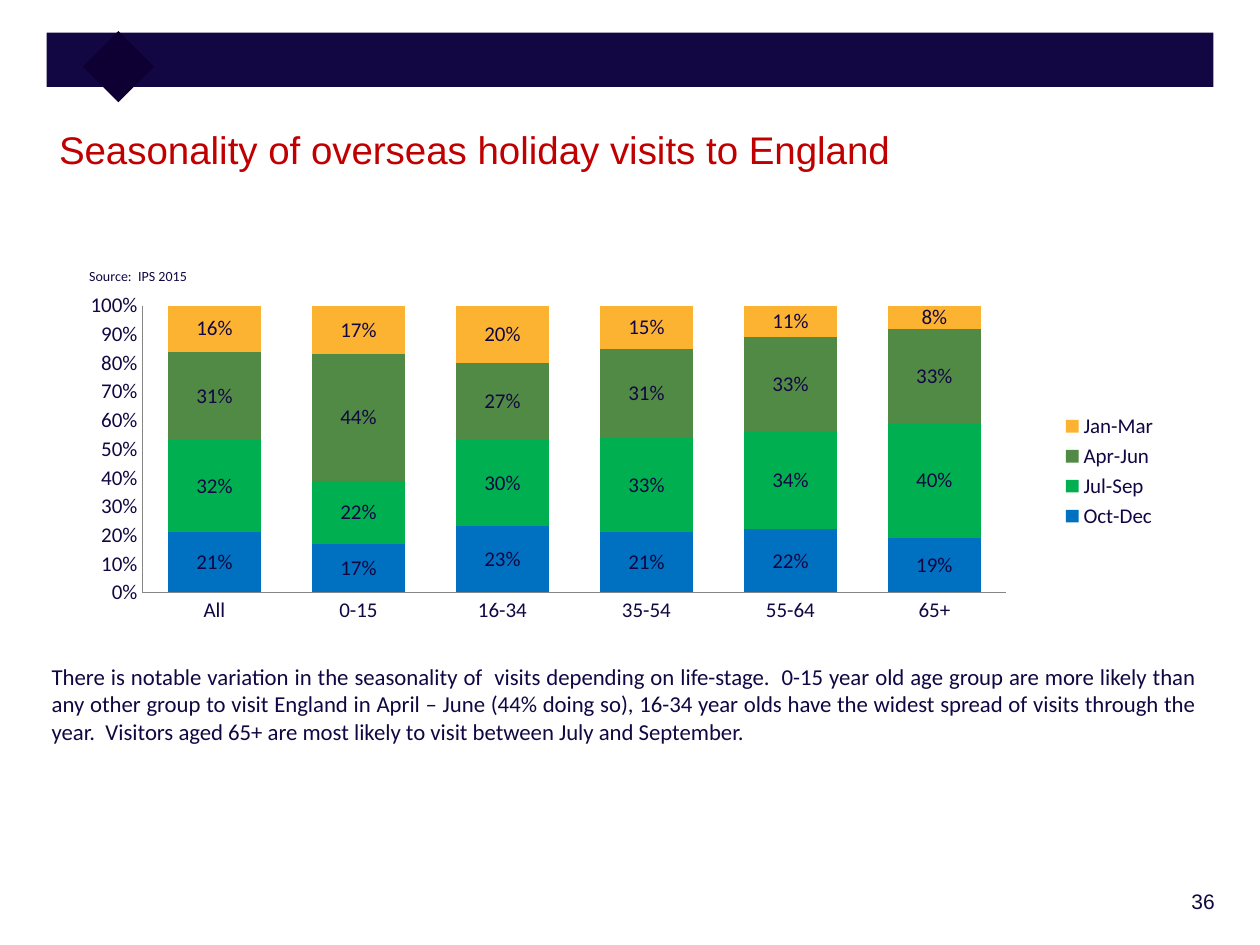
from lxml import etree
from pptx import Presentation
from pptx.chart.data import CategoryChartData
from pptx.dml.color import RGBColor
from pptx.enum.chart import XL_CHART_TYPE, XL_LEGEND_POSITION, XL_TICK_MARK
from pptx.enum.shapes import MSO_SHAPE
from pptx.enum.text import PP_ALIGN
from pptx.oxml.ns import qn
from pptx.util import Inches, Pt

STACK = XL_CHART_TYPE.COLUMN_STACKED_100
RIGHT = XL_LEGEND_POSITION.RIGHT
NO_TICK = XL_TICK_MARK.NONE
RECT = MSO_SHAPE.RECTANGLE
ALIGN = {"l": PP_ALIGN.LEFT, "r": PP_ALIGN.RIGHT, "j": PP_ALIGN.JUSTIFY}

THEME = {
    "ink": "120742", "gem": "0E0033", "title": "C00000", "axis": "868686",
    "head": "Arial", "body": "Calibri",
    "size": {"title": 22, "body": 13, "chart": 12, "page": 12, "source": 8},
}

# Content; boxes are left, top, width, height in percent of the slide
TEXTS = [
    # words, box, size, font, colour, alignment, wrap, left inset
    ("36", (85.3, 93.33, 12.1, 4.8), "page", "head", "ink", "r", True, 0.1),
    ("Source:  IPS 2015", (6.1, 27.6, 10.3, 2.4),
     "source", "body", "ink", "l", False, 0.1),
    ("Seasonality of overseas holiday visits to England",
     (3.7, 12.67, 89.1, 8.13), "title", "head", "title", "l", True, 0.1),
    ("There is notable variation in the seasonality of  visits depending on "
     "life-stage.  0-15 year old age group are more likely than any other "
     "group to visit England in April – June (44% doing so), 16-34 year olds "
     "have the widest spread of visits through the year.  Visitors aged 65+ "
     "are most likely to visit between July and September.",
     (3.7, 69.47, 92.1, 20.13), "body", "body", "ink", "j", True, 0.04),
]
BLOCKS = [
    # box, colour, turn
    ((3.7, 3.47, 92.6, 5.73), "ink", 0),
    ((7.4, 4.4, 4, 5.33), "gem", 45),
]
AGES = ["All", "0-15", "16-34", "35-54", "55-64", "65+"]
SEASONS = [
    ("Oct-Dec", "0070C0", (21, 17, 23, 21, 22, 19)),
    ("Jul-Sep", "00B050", (32, 22, 30, 33, 34, 40)),
    ("Apr-Jun", "518A45", (31, 44, 27, 31, 33, 33)),
    ("Jan-Mar", "FDB332", (16, 17, 20, 15, 11, 8)),
]
CHART_BOX = (6.1, 30.4, 86.8, 38.93)
PLOT = {"x": 0.06, "y": 0.05, "w": 0.79, "h": 0.78}

deck = Presentation()
deck.slide_width, deck.slide_height = Inches(10), Inches(7.5)
slide = deck.slides.add_slide(deck.slide_layouts[6])


def place(box):
    sides = (deck.slide_width, deck.slide_height) * 2
    return [round(part * side / 100) for part, side in zip(box, sides)]


def tint(name):
    return RGBColor.from_string(THEME.get(name, name))


def style(font, size, face, color):
    font.size = Pt(THEME["size"][size])
    font.name = THEME[face]
    font.color.rgb = tint(color)


def add_block(box, color, turn):
    shape = slide.shapes.add_shape(RECT, *place(box))
    shape.shadow.inherit = False
    shape.fill.solid()
    shape.fill.fore_color.rgb = tint(color)
    shape.line.fill.background()
    shape.rotation = turn


def add_text(words, box, size, face, color, align, wrap, inset):
    frame = slide.shapes.add_textbox(*place(box)).text_frame
    frame.word_wrap = wrap
    frame.margin_left = Inches(inset)
    para = frame.paragraphs[0]
    para.text = words
    para.alignment = ALIGN[align]
    style(para.font, size, face, color)


def set_plot(chart):
    """Fix the inner plot area as shares of the chart."""
    area = chart.element.find(".//" + qn("c:plotArea"))
    layout = area.find(qn("c:layout"))
    if layout is None:
        layout = etree.Element(qn("c:layout"))
        area.insert(0, layout)
    manual = etree.SubElement(layout, qn("c:manualLayout"))
    rules = [("layoutTarget", "inner"), ("xMode", "edge"), ("yMode", "edge")]
    for tag, val in rules + list(PLOT.items()):
        etree.SubElement(manual, qn("c:" + tag), val=str(val))


def add_chart():
    data = CategoryChartData(number_format="0%")
    data.categories = AGES
    for name, _, shares in SEASONS:
        data.add_series(name, [share / 100 for share in shares])
    chart = slide.shapes.add_chart(STACK, *place(CHART_BOX), data).chart
    style(chart.font, "chart", "body", "ink")
    chart.has_title = False
    chart.has_legend = True
    chart.legend.position = RIGHT
    chart.legend.include_in_layout = False
    set_plot(chart)

    # Bars and labels
    plot = chart.plots[0]
    plot.gap_width, plot.overlap = 55, 100
    plot.vary_by_categories = False
    for series, (_, color, _) in zip(plot.series, SEASONS):
        series.format.fill.solid()
        series.format.fill.fore_color.rgb = tint(color)
        labels = series.data_labels
        labels.show_value = True
        labels.number_format = "0%"
        labels.number_format_is_linked = False

    # Axes
    for axis in (chart.category_axis, chart.value_axis):
        axis.has_major_gridlines = False
        axis.major_tick_mark = axis.minor_tick_mark = NO_TICK
        axis.format.line.color.rgb = tint("axis")
        axis.format.line.width = Pt(0.75)
    scale = chart.value_axis
    scale.minimum_scale, scale.maximum_scale, scale.major_unit = 0, 1, 0.1
    scale.tick_labels.number_format = "0%"
    scale.tick_labels.number_format_is_linked = False


for block in BLOCKS:
    add_block(*block)
add_chart()
for text in TEXTS:
    add_text(*text)
deck.save("out.pptx")
